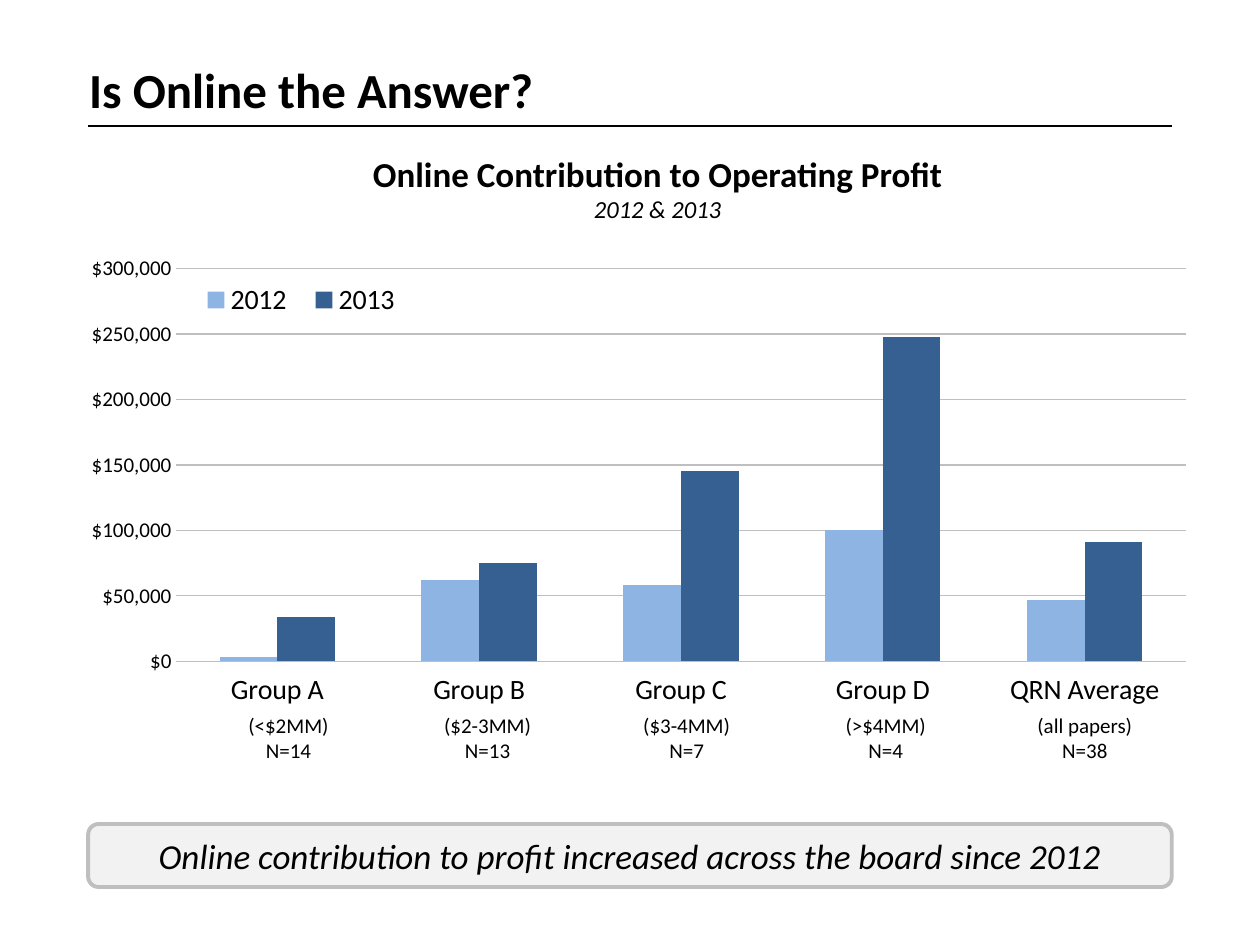
from lxml.etree import SubElement
from pptx import Presentation
from pptx.chart.data import CategoryChartData
from pptx.dml.color import RGBColor
from pptx.enum.chart import XL_CHART_TYPE as ChartType
from pptx.enum.chart import XL_LEGEND_POSITION as LegendPosition
from pptx.enum.chart import XL_TICK_LABEL_POSITION as LabelPosition
from pptx.enum.chart import XL_TICK_MARK as TickMark
from pptx.enum.shapes import MSO_CONNECTOR as Connector
from pptx.enum.shapes import MSO_SHAPE as Shape
from pptx.enum.text import MSO_ANCHOR as Anchor
from pptx.enum.text import PP_ALIGN as Align
from pptx.oxml import parse_xml
from pptx.oxml.ns import nsdecls, qn
from pptx.util import Inches, Pt

FONT = "Calibri"
BLACK = RGBColor(0x00, 0x00, 0x00)
GRAY = RGBColor(0xBF, 0xBF, 0xBF)
PALE_GRAY = RGBColor(0xF2, 0xF2, 0xF2)
LIGHT_BLUE = RGBColor(0x8E, 0xB4, 0xE3)
DARK_BLUE = RGBColor(0x37, 0x60, 0x92)

GROUPS = ["Group A", "Group B", "Group C", "Group D", "QRN Average"]
PROFIT = [
    ("2012", [3000, 62000, 58000, 100000, 47000], LIGHT_BLUE),
    ("2013", [34000, 75000, 145000, 248000, 91000], DARK_BLUE),
]
GROUP_DETAILS = [
    ["(<$2MM)", "($2-3MM)", "($3-4MM)", "(>$4MM)", "(all papers)"],
    ["N=14", "N=13", "N=7", "N=4", "N=38"],
]


def style_font(font, size, bold=False, italic=False):
    font.name = FONT
    font.size = Pt(size)
    font.bold = bold
    font.italic = italic
    font.color.rgb = BLACK


def write_para(para, text, size, align=Align.LEFT, bold=False, italic=False):
    para.text = text
    para.alignment = align
    for span in para.runs:
        style_font(span.font, size, bold, italic)


def add_text_box(page, left, top, width, height):
    box = page.shapes.add_textbox(Inches(left), Inches(top), Inches(width), Inches(height))
    box.text_frame.word_wrap = True
    return box.text_frame


def add_title(page):
    frame = add_text_box(page, 0.61, 0.42, 8.5, 0.58)
    write_para(frame.paragraphs[0], "Is Online the Answer?", 28, bold=True)
    rule = page.shapes.add_connector(
        Connector.STRAIGHT, Inches(0.7), Inches(1), Inches(9.3), Inches(1)
    )
    rule.line.color.rgb = BLACK
    rule.line.width = Pt(0.75)
    SubElement(rule._element.spPr, qn("a:effectLst"))


def add_chart_heading(page):
    frame = add_text_box(page, 2.15, 1.16, 6.14, 0.67)
    write_para(
        frame.paragraphs[0], "Online Contribution to Operating Profit", 20, Align.CENTER, bold=True
    )
    write_para(frame.add_paragraph(), "2012 & 2013", 14, Align.CENTER, italic=True)


def set_layout(element, index, left, top, width, height, inner=False):
    for old in element.findall(qn("c:layout")):
        element.remove(old)
    target = '<c:layoutTarget val="inner"/>' if inner else ""
    element.insert(index, parse_xml(
        f'<c:layout {nsdecls("c")}><c:manualLayout>{target}'
        '<c:xMode val="edge"/><c:yMode val="edge"/>'
        f'<c:x val="{left}"/><c:y val="{top}"/><c:w val="{width}"/><c:h val="{height}"/>'
        "</c:manualLayout></c:layout>"
    ))


def style_axis(axis, size):
    axis.major_tick_mark = TickMark.NONE
    axis.minor_tick_mark = TickMark.NONE
    axis.format.line.fill.background()
    style_font(axis.tick_labels.font, size)


def add_profit_chart(page):
    data = CategoryChartData()
    data.categories = GROUPS
    for name, values, _ in PROFIT:
        data.add_series(name, values)
    chart = page.shapes.add_chart(
        ChartType.COLUMN_CLUSTERED, Inches(0.5), Inches(1.9), Inches(9), Inches(3.85), data
    ).chart
    style_font(chart.font, 18)
    chart.has_title = False

    plot = chart.plots[0]
    plot.gap_width = 150
    plot.overlap = 0
    plot.vary_by_categories = False
    for series, (_, _, color) in zip(plot.series, PROFIT):
        series.format.fill.solid()
        series.format.fill.fore_color.rgb = color

    style_axis(chart.category_axis, 16)
    chart.category_axis.tick_label_position = LabelPosition.LOW
    values_axis = chart.value_axis
    style_axis(values_axis, 12)
    values_axis.minimum_scale = 0
    values_axis.maximum_scale = 300000
    values_axis.major_unit = 50000
    values_axis.tick_labels.number_format = '"$"#,##0'
    values_axis.tick_labels.number_format_is_linked = False
    values_axis.major_gridlines.format.line.color.rgb = GRAY
    values_axis.major_gridlines.format.line.width = Pt(0.75)

    chart.has_legend = True
    legend = chart.legend
    legend.position = LegendPosition.TOP
    legend.include_in_layout = False
    style_font(legend.font, 16)
    set_layout(legend._element, 1, 0.11, 0.08, 0.2, 0.09)
    plot_area = chart._chartSpace.chart.plotArea
    set_layout(plot_area, 0, 0.1, 0.06, 0.89, 0.81, inner=True)


def add_group_table(page):
    table = page.shapes.add_table(
        len(GROUP_DETAILS), len(GROUPS), Inches(1.5), Inches(5.66), Inches(7.9), Inches(0.4)
    ).table
    table.first_row = False
    table.horz_banding = False
    for row, texts in zip(table.rows, GROUP_DETAILS):
        for cell, text in zip(row.cells, texts):
            cell.fill.background()
            cell.vertical_anchor = Anchor.MIDDLE
            cell.margin_left = cell.margin_right = 0
            cell.margin_top = cell.margin_bottom = 0
            write_para(cell.text_frame.paragraphs[0], text, 12, Align.CENTER)


def add_takeaway(page):
    banner = page.shapes.add_shape(
        Shape.ROUNDED_RECTANGLE, Inches(0.7), Inches(6.54), Inches(8.6), Inches(0.5)
    )
    banner.shadow.inherit = False
    banner.fill.solid()
    banner.fill.fore_color.rgb = PALE_GRAY
    banner.line.color.rgb = GRAY
    banner.line.width = Pt(2.25)
    frame = banner.text_frame
    frame.word_wrap = True
    frame.vertical_anchor = Anchor.MIDDLE
    write_para(
        frame.paragraphs[0],
        "Online contribution to profit increased across the board since 2012",
        20, Align.CENTER, italic=True,
    )


def main():
    deck = Presentation()
    deck.slide_width = Inches(10)
    deck.slide_height = Inches(7.5)
    page = deck.slides.add_slide(deck.slide_layouts[6])
    add_profit_chart(page)
    add_title(page)
    add_group_table(page)
    add_takeaway(page)
    add_chart_heading(page)
    deck.save("out.pptx")


if __name__ == "__main__":
    main()
